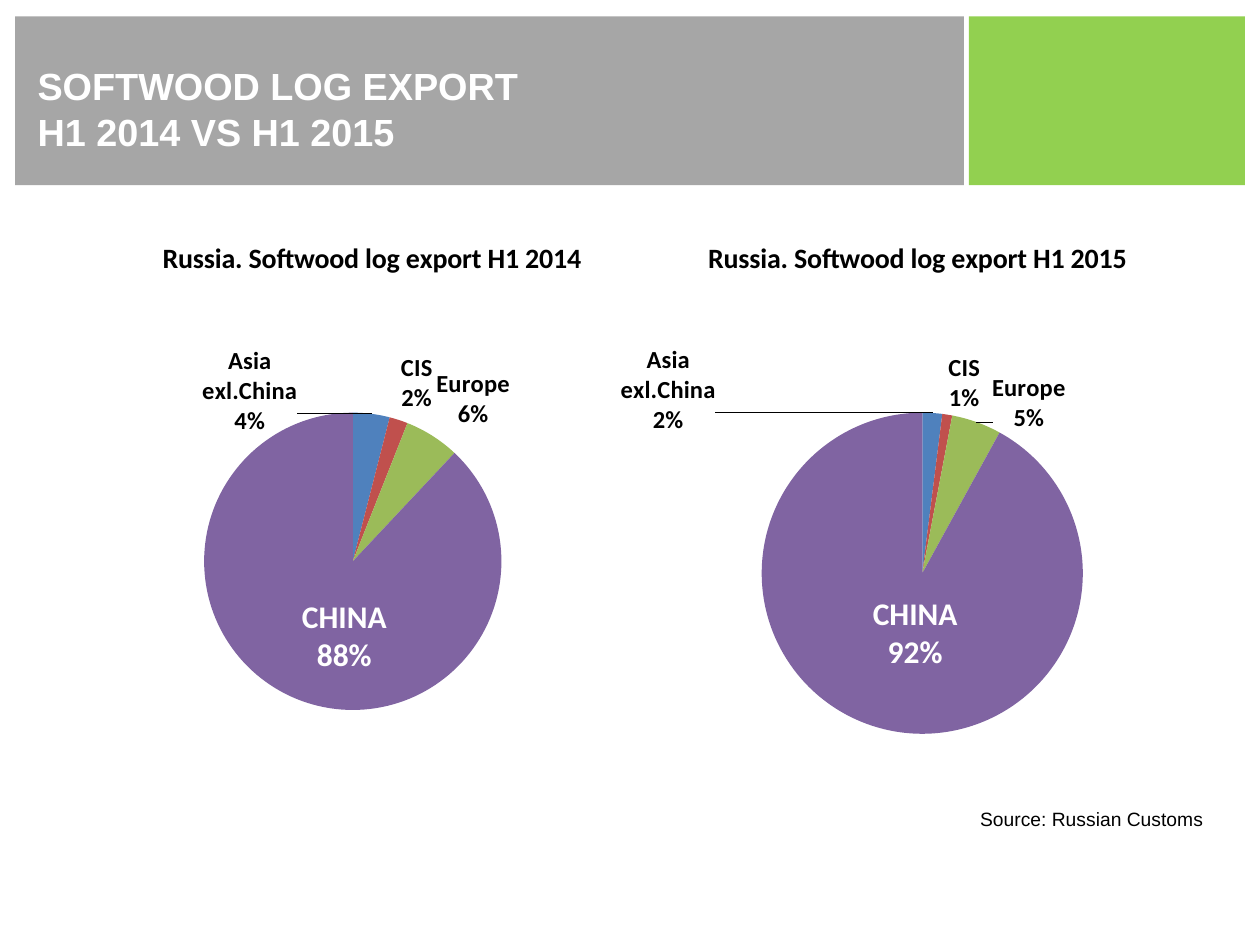
from collections import namedtuple

from lxml import etree
from pptx import Presentation
from pptx.chart.data import CategoryChartData
from pptx.dml.color import RGBColor
from pptx.enum.chart import XL_CHART_TYPE, XL_LABEL_POSITION
from pptx.enum.shapes import MSO_SHAPE
from pptx.enum.text import MSO_ANCHOR
from pptx.oxml.ns import qn
from pptx.util import Inches, Pt

PIE = XL_CHART_TYPE.PIE
CENTER = XL_LABEL_POSITION.CENTER
OUTSIDE = XL_LABEL_POSITION.OUTSIDE_END
RECTANGLE = MSO_SHAPE.RECTANGLE
MIDDLE = MSO_ANCHOR.MIDDLE

CELL = Inches(0.1)
COLUMNS, ROWS = 100, 75
Box = namedtuple("Box", "left top width height")

MARKETS = ["Asia exl.China", "CIS", "Europe", "China"]
SLICE_COLORS = ["4F81BD", "C0504D", "9BBB59", "8064A2"]
ASIA, CIS, EUROPE, CHINA = range(4)
PERIODS = [
    {
        "title": "Russia. Softwood log export H1 2014",
        "box": Box(3.5, 18.6, 50, 47.2),
        "shares": [4, 2, 6, 88],
        "title_at": {"x": 0.18, "y": 0},
        "pie_at": {"x": 0.25, "y": 0.3, "w": 0.48, "h": 0.5},
        "shifts": {ASIA: (-0.27, 0.05), CHINA: (0.03, 0.01)},
    },
    {
        "title": "Russia. Softwood log export H1 2015",
        "box": Box(47.6, 18.6, 51.2, 47.2),
        "shares": [2, 1, 5, 92],
        "title_at": {"x": 0.16, "y": 0},
        "pie_at": {"x": 0.25, "y": 0.3, "w": 0.5, "h": 0.54},
        "shifts": {ASIA: (-0.41, 0.05), CIS: (0, 0.01), EUROPE: (0.02, 0.03), CHINA: (0.02, -0.03)},
    },
]


def color(value):
    """Turn a hex string into a colour."""
    return RGBColor.from_string(value)


def emu(box):
    """Turn grid units into slide lengths."""
    return [int(length * CELL) for length in box]


def style_font(font, name, size, value, bold=False):
    """Set the face, size, colour and weight of a font."""
    font.name, font.size, font.bold = name, Pt(size), bold
    font.color.rgb = color(value)


def add_block(page, box, fill):
    """Draw a plain filled rectangle."""
    block = page.shapes.add_shape(RECTANGLE, *emu(box))
    block.shadow.inherit = False
    block.fill.solid()
    block.fill.fore_color.rgb = color(fill)
    block.line.fill.background()


def add_text(page, box, lines, size, value, bold=False, wrap=True):
    """Write lines of Arial in a vertically centred text box."""
    frame = page.shapes.add_textbox(*emu(box)).text_frame
    frame.word_wrap = wrap
    frame.vertical_anchor = MIDDLE
    frame.text = "\n".join(lines)
    for para in frame.paragraphs:
        style_font(para.font, "Arial", size, value, bold)


def add_header(page, box):
    """Draw the grey title band and the green block beside it."""
    title_width, gap = 75.3, 0.4
    green_left = box.left + title_width + gap
    add_block(page, box._replace(width=title_width), "A6A6A6")
    add_block(page, Box(green_left, box.top, box.width - title_width - gap, box.height), "92D050")
    title_box = Box(box.left + 0.8, box.top + 1.4, title_width - 2, box.height - 1.6)
    add_text(page, title_box, ["SOFTWOOD LOG EXPORT", "H1 2014 VS H1 2015"], 21.6, "FFFFFF", True)


def set_layout(parent, position, after=None, inner=False):
    """Give a chart part a manual layout."""
    for old in parent.findall(qn("c:layout")):
        parent.remove(old)
    layout = etree.Element(qn("c:layout"))
    manual = etree.SubElement(layout, qn("c:manualLayout"))
    if inner:
        etree.SubElement(manual, qn("c:layoutTarget")).set("val", "inner")
    if after != "c:idx":
        for mode in ("xMode", "yMode"):
            etree.SubElement(manual, qn(f"c:{mode}")).set("val", "edge")
    for key, share in position.items():
        etree.SubElement(manual, qn(f"c:{key}")).set("val", str(share))
    if after:
        parent.find(qn(after)).addnext(layout)
    else:
        parent.insert(0, layout)


def show_parts(node):
    """Show category and percentage on separate lines."""
    for part, shown in (("showVal", 0), ("showCatName", 1), ("showPercent", 1)):
        node.find(qn(f"c:{part}")).set("val", str(shown))
    separator = etree.Element(qn("c:separator"))
    separator.text = "\n"
    node.find(qn("c:showBubbleSize")).addnext(separator)


def label_slices(series, shares, shifts):
    """Label the slices, with moved labels where needed."""
    labels = series.data_labels
    labels.number_format, labels.number_format_is_linked = "0%", False
    labels.position = OUTSIDE
    style_font(labels.font, "Calibri", 14, "000000", True)
    show_parts(labels._element)
    for index, shift in shifts.items():
        label = series.points[index].data_label
        if index == CHINA:
            label.text_frame.text = f"CHINA\n{shares[CHINA]}%"
            for para in label.text_frame.paragraphs:
                style_font(para.runs[0].font, "Calibri", 18, "FFFFFF", True)
        else:
            style_font(label.font, "Calibri", 14, "000000", True)
        label.position = CENTER if index == CHINA else OUTSIDE
        node = series._element.xpath(f"c:dLbls/c:dLbl[c:idx/@val={index}]")[0]
        show_parts(node)
        set_layout(node, dict(zip("xy", shift)), after="c:idx")


def add_export_pie(page, box, title, shares, title_at, pie_at, shifts):
    """Draw one half-year's export pie with its title."""
    data = CategoryChartData(number_format="#,##0")
    data.categories = MARKETS
    data.add_series("Series 1", shares)
    chart = page.shapes.add_chart(PIE, *emu(box), data).chart
    style_font(chart.font, "Calibri", 10, "000000")
    chart.has_legend = False
    chart.chart_title.text_frame.text = title
    style_font(chart.chart_title.text_frame.paragraphs[0].runs[0].font, "Calibri", 16, "000000", True)
    set_layout(chart.chart_title._element, title_at, after="c:tx")
    plot = chart.plots[0]
    plot.vary_by_categories = True
    set_layout(plot._element.getparent(), pie_at, inner=True)
    series = plot.series[0]
    for index, value in enumerate(SLICE_COLORS):
        fill = series.points[index].format.fill
        fill.solid()
        fill.fore_color.rgb = color(value)
    label_slices(series, shares, shifts)


def main():
    """Build the softwood export slide."""
    deck = Presentation()
    deck.slide_width, deck.slide_height = COLUMNS * CELL, ROWS * CELL
    page = deck.slides.add_slide(deck.slide_layouts[6])
    add_header(page, Box(1.2, 1.3, 97.6, 13.4))
    for period in PERIODS:
        add_export_pie(page, **period)
    add_text(page, Box(76.8, 63.5, 19.8, 2.9), ["Source: Russian Customs"], 11, "000000", wrap=False)
    deck.save("out.pptx")


if __name__ == "__main__":
    main()
